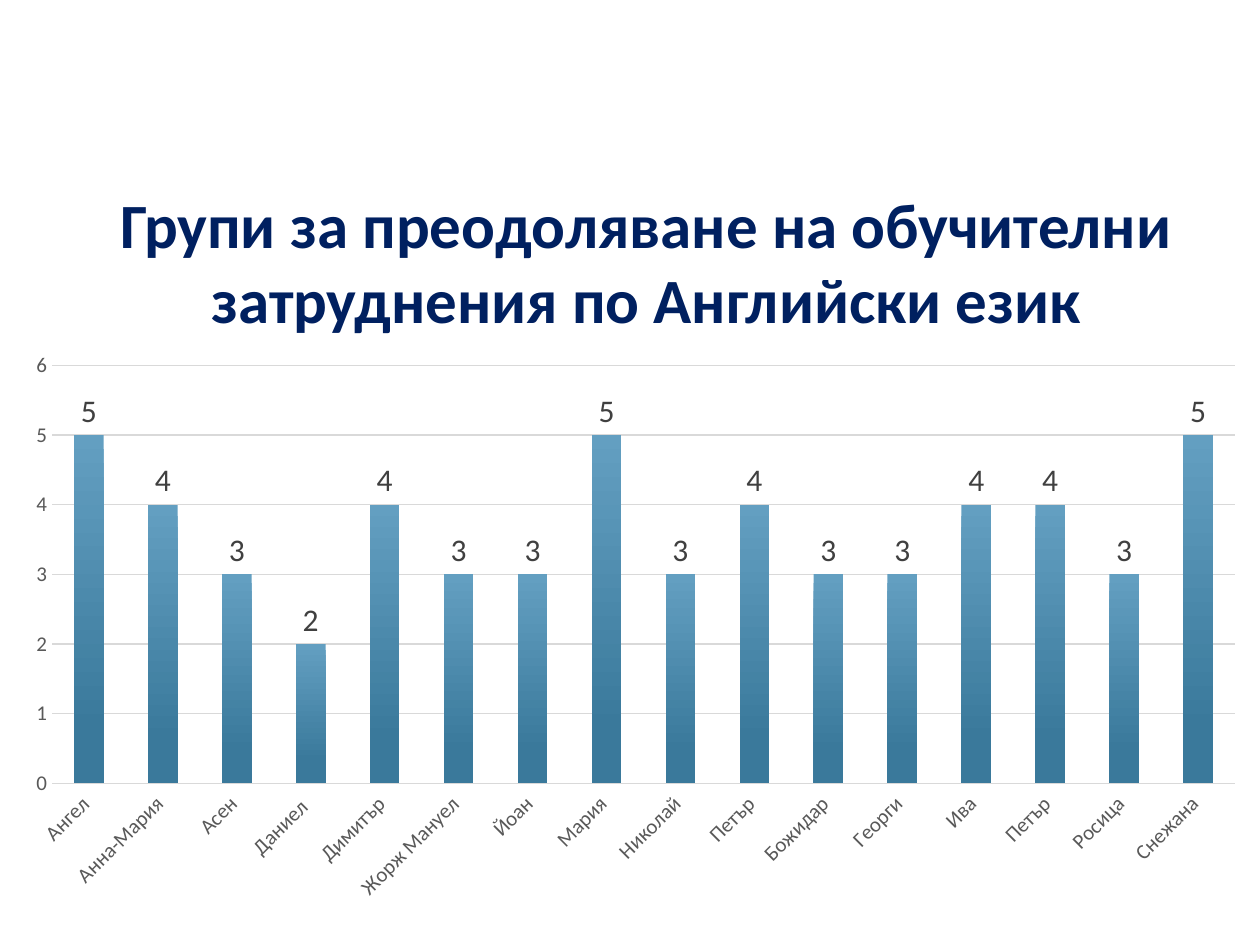
import pptx
import pptx.chart.data
import pptx.dml.color
import pptx.enum.chart
import pptx.enum.text
import pptx.util

FONT = "Calibri"
HEADING = "Групи за преодоляване на обучителни затруднения по Английски език"
PUPILS = [
    ("Ангел", 5), ("Анна-Мария", 4), ("Асен", 3), ("Даниел\u00a0", 2),
    ("Димитър", 4), ("Жорж Мануел", 3), ("Йоан", 3), ("Мария", 5),
    ("Николай", 3), ("Петър", 4), ("Божидар", 3), ("Георги", 3),
    ("Ива", 4), ("Петър", 4), ("Росица", 3), ("Снежана", 5),
]


def pt(length):
    return pptx.util.Pt(length)


def color(hex_code):
    return pptx.dml.color.RGBColor.from_string(hex_code)


def style_font(font, size, hex_code, bold=False):
    font.name = FONT
    font.size = pt(size)
    font.bold = bold
    font.color.rgb = color(hex_code)


def add_heading(slide):
    heading = slide.shapes.title
    heading.left, heading.top = pt(28.8), pt(85.7)
    heading.width, heading.height = pt(681.1), pt(110.2)
    frame = heading.text_frame
    frame.word_wrap = True
    frame.auto_size = pptx.enum.text.MSO_AUTO_SIZE.NONE
    frame.vertical_anchor = pptx.enum.text.MSO_ANCHOR.BOTTOM
    paragraph = frame.paragraphs[0]
    paragraph.alignment = pptx.enum.text.PP_ALIGN.CENTER
    paragraph.line_spacing = 1.0
    run = paragraph.add_run()
    run.text = HEADING
    style_font(run.font, 36, "002060", bold=True)


def style_axis(axis):
    axis.major_tick_mark = pptx.enum.chart.XL_TICK_MARK.NONE
    axis.minor_tick_mark = pptx.enum.chart.XL_TICK_MARK.NONE
    axis.format.line.fill.background()
    style_font(axis.tick_labels.font, 12, "595959")


def style_columns(series):
    series.invert_if_negative = False
    fill = series.format.fill
    fill.gradient()
    fill.gradient_angle = 270  # light at the top, dark at the foot
    for stop, (position, hex_code) in zip(
            fill.gradient_stops, [(0, "639FC1"), (0.84, "3A799B")]):
        stop.position = position
        stop.color.rgb = color(hex_code)

    labels = series.data_labels
    labels.show_value = True
    labels.position = pptx.enum.chart.XL_LABEL_POSITION.OUTSIDE_END
    style_font(labels.font, 18, "404040")


def add_pupil_chart(slide):
    group_data = pptx.chart.data.CategoryChartData(number_format="General")
    group_data.categories = [f"\u00a0{name} " for name, _ in PUPILS]
    group_data.add_series("Series 1", [value for _, value in PUPILS])
    chart = slide.shapes.add_chart(
        pptx.enum.chart.XL_CHART_TYPE.COLUMN_CLUSTERED,
        pt(6.5), pt(195.1), pt(713.5), pt(327.6), group_data).chart
    chart.has_legend = False
    chart.has_title = False
    style_font(chart.font, 10, "000000")

    # Axes
    names, scale = chart.category_axis, chart.value_axis
    style_axis(names)
    style_axis(scale)
    names.tick_labels.font._element.getparent().getparent().getparent().find(
        "{*}bodyPr").set("rot", "-2700000")  # names slant at 45 degrees
    scale.minimum_scale, scale.maximum_scale, scale.major_unit = 0, 6, 1
    scale.has_major_gridlines = True
    grid = scale.major_gridlines.format.line
    grid.width = pt(0.75)
    grid.color.rgb = color("D9D9D9")

    # Columns
    plot = chart.plots[0]
    plot.gap_width = 150
    plot.vary_by_categories = False
    style_columns(plot.series[0])


def main():
    presentation = pptx.Presentation()
    presentation.slide_width, presentation.slide_height = pt(720), pt(540)
    slide = presentation.slides.add_slide(presentation.slide_layouts[5])
    add_heading(slide)
    add_pupil_chart(slide)
    presentation.save("out.pptx")


if __name__ == "__main__":
    main()
